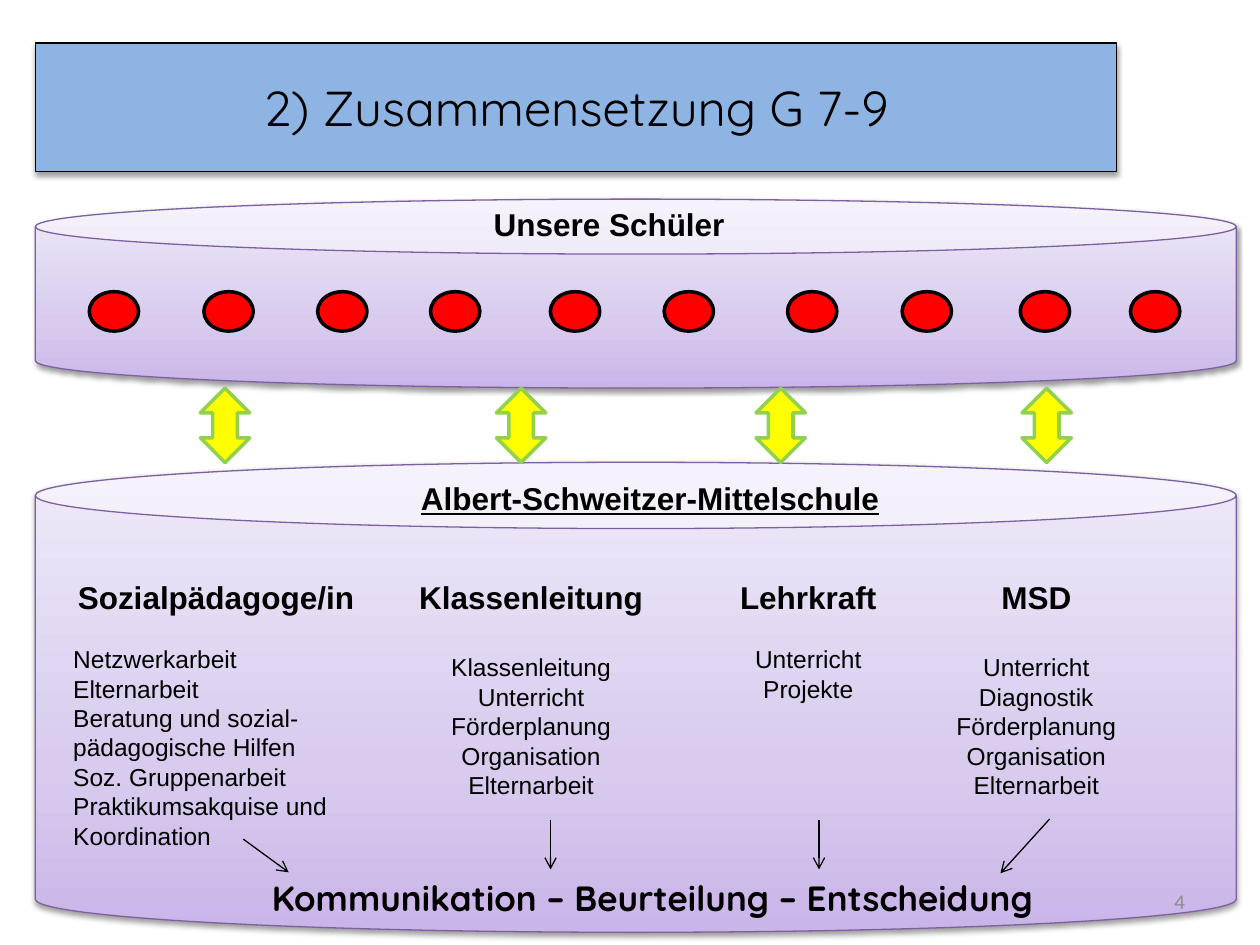
import copy

import pptx
import pptx.dml.color
import pptx.enum.shapes
import pptx.enum.text
import pptx.oxml
import pptx.oxml.ns
import pptx.util
from lxml import etree

Pt = pptx.util.Pt
qn = pptx.oxml.ns.qn
SHAPE = pptx.enum.shapes.MSO_SHAPE
ALIGN = pptx.enum.text.PP_ALIGN
ANCHOR = pptx.enum.text.MSO_ANCHOR

HEADING = {"name": "Arial", "size": Pt(18), "bold": True}
ITEM = {"name": "Arial", "size": Pt(14), "bold": False}
GRADIENT = [(0, "C9B5E8"), (0.35, "D8CBEE"), (1, "F0EAF9")]
CAN_LEFT, CAN_WIDTH = 20.2, 686.2
ICON_WIDTH = 28.2

STUDENT_LEFTS = [51, 116.5, 181.5, 246, 314.5, 379.5, 450, 515.5, 583, 646]
EXCHANGE_LEFTS = [114.5, 283.7, 432, 584]
DECISION_ARROWS = [(139, 479.5, 165, 498.5), (314.6, 468.7, 314.6, 496.8),
                   (468, 468.7, 468, 496.8), (599.8, 468, 571.7, 499)]
# left, width, gap under the heading, alignment of the tasks, heading, tasks
ROLES = [
    (34.6, 177.8, 16, ALIGN.LEFT, "Sozialpädagoge/in",
     ["Netzwerkarbeit", "Elternarbeit", "Beratung und sozial-",
      "pädagogische Hilfen", "Soz. Gruppenarbeit",
      "Praktikumsakquise und", "Koordination"]),
    (229.7, 147.6, 20.7, ALIGN.CENTER, "Klassenleitung",
     ["Klassenleitung", "Unterricht", "Förderplanung", "Organisation",
      "Elternarbeit"]),
    (388.1, 147.6, 16, ALIGN.CENTER, "Lehrkraft", ["Unterricht", "Projekte"]),
    (518.4, 147.6, 20.7, ALIGN.CENTER, "MSD",
     ["Unterricht", "Diagnostik", "Förderplanung", "Organisation",
      "Elternarbeit"]),
]


def rgb(value):
    return pptx.dml.color.RGBColor.from_string(value)


def place(sp, *box):
    for name, value in zip(("left", "top", "width", "height"), box):
        setattr(sp, name, Pt(value))


def set_line(sp, color, width):
    sp.line.color.rgb = rgb(color)
    sp.line.width = Pt(width)


def write(p, text, font, align=ALIGN.LEFT, color="000000"):
    p.alignment = align
    r = p.add_run()
    r.text = text
    for name, value in font.items():
        setattr(r.font, name, value)
    r.font.color.rgb = rgb(color)


def add_soft_shadow(sp):
    sp._element.spPr.append(pptx.oxml.parse_xml(
        f'<a:effectLst {pptx.oxml.ns.nsdecls("a")}>'
        '<a:outerShdw blurRad="40000" dist="20000" dir="5400000" rotWithShape="0">'
        '<a:srgbClr val="000000"><a:alpha val="38000"/></a:srgbClr>'
        '</a:outerShdw></a:effectLst>'))


def add_shape(s, kind, box, fill, line, width):
    sp = s.shapes.add_shape(kind, *map(Pt, box))
    sp.shadow.inherit = False
    sp.fill.solid()
    sp.fill.fore_color.rgb = rgb(fill)
    set_line(sp, line, width)


def add_can(s, top, height, rim):
    sp = s.shapes.add_shape(SHAPE.CAN, *map(Pt, (CAN_LEFT, top, CAN_WIDTH, height)))
    sp.adjustments[0] = rim
    sp.fill.gradient()
    sp.fill.gradient_angle = 90
    stops = sp._element.spPr.find(".//" + qn("a:gsLst"))
    stops.append(copy.deepcopy(stops[-1]))
    for stop, (position, color) in zip(sp.fill.gradient_stops, GRADIENT):
        stop.position = position
        stop.color.rgb = rgb(color)
    set_line(sp, "7D60A0", 0.75)
    add_soft_shadow(sp)


def add_text(s, box, text, font, align=ALIGN.LEFT, color="000000", anchor=ANCHOR.TOP):
    tf = s.shapes.add_textbox(*map(Pt, box)).text_frame
    tf.word_wrap = True
    tf.vertical_anchor = anchor
    write(tf.paragraphs[0], text, font, align, color)


def add_arrow(s, x1, y1, x2, y2):
    c = s.shapes.add_connector(pptx.enum.shapes.MSO_CONNECTOR.STRAIGHT,
                               *map(Pt, (x1, y1, x2, y2)))
    set_line(c, "000000", 0.75)
    etree.SubElement(c.line._get_or_add_ln(), qn("a:tailEnd"), type="arrow")
    etree.SubElement(c._element.spPr, qn("a:effectLst"))


def fill_title(sp, text):
    """Turn the title placeholder into a scroll banner."""
    place(sp, 20.2, 24.5, 617.8, 73.4)
    etree.SubElement(sp._element.spPr, qn("a:prstGeom"), prst="horizontalScroll")
    sp.fill.solid()
    sp.fill.fore_color.rgb = rgb("8EB4E3")
    set_line(sp, "000000", 0.75)
    add_soft_shadow(sp)
    tf = sp.text_frame
    tf.vertical_anchor = ANCHOR.MIDDLE
    write(tf.paragraphs[0], text, {"name": "Quicksand", "size": Pt(28)}, ALIGN.CENTER)


def fill_role(s, sp, left, width, gap, align, heading, tasks):
    """Write one role into a body placeholder and raise it above the can."""
    place(sp, left, 326.9, width, 165)
    s.shapes._spTree.append(sp._element)
    tf = sp.text_frame
    tf.auto_size = pptx.enum.text.MSO_AUTO_SIZE.NONE
    tf.vertical_anchor = ANCHOR.TOP
    write(tf.paragraphs[0], heading, HEADING, ALIGN.CENTER)
    for task in tasks:
        write(tf.add_paragraph(), task, ITEM, align)
    for i, p in enumerate(tf.paragraphs):
        p.space_before = Pt(gap if i == 1 else 0)
        pPr = p._p.get_or_add_pPr()
        pPr.set("marL", "0")
        pPr.set("indent", "0")
        etree.SubElement(pPr, qn("a:buNone"))


def main():
    prs = pptx.Presentation()
    prs.slide_width, prs.slide_height = Pt(720), Pt(540)
    comparison = prs.slide_layouts[4]
    s = prs.slides.add_slide(comparison)
    title, *bodies = list(s.placeholders)

    fill_title(title, "2) Zusammensetzung G 7-9")
    add_can(s, 113.8, 108, 0.291)
    add_text(s, (275, 113.8, 224, 29), "Unsere Schüler", HEADING)
    for left in STUDENT_LEFTS:
        add_shape(s, SHAPE.OVAL, (left, 166.7, ICON_WIDTH, 22.5), "FF0000", "000000", 2)

    add_can(s, 264.2, 268.6, 0.141)
    add_text(s, (93.6, 270, 555.8, 51), "Albert-Schweitzer-Mittelschule",
             {**HEADING, "underline": True}, ALIGN.CENTER)
    for sp, role in zip(bodies, ROLES):
        fill_role(s, sp, *role)
    for ends in DECISION_ARROWS:
        add_arrow(s, *ends)
    add_text(s, (148.3, 497.5, 473.8, 31.7), "Kommunikation – Beurteilung – Entscheidung",
             {"name": "Quicksand", "size": Pt(20), "bold": True})
    for left in EXCHANGE_LEFTS:
        add_shape(s, SHAPE.UP_DOWN_ARROW, (left, 221.8, ICON_WIDTH, 42.5),
                  "FFFF00", "92D050", 2)
    add_text(s, (516.2, 500.5, 168, 28.8), "4", {"name": "Calibri", "size": Pt(12)},
             ALIGN.RIGHT, "8C8C8C", ANCHOR.MIDDLE)
    prs.save("out.pptx")


if __name__ == "__main__":
    main()
